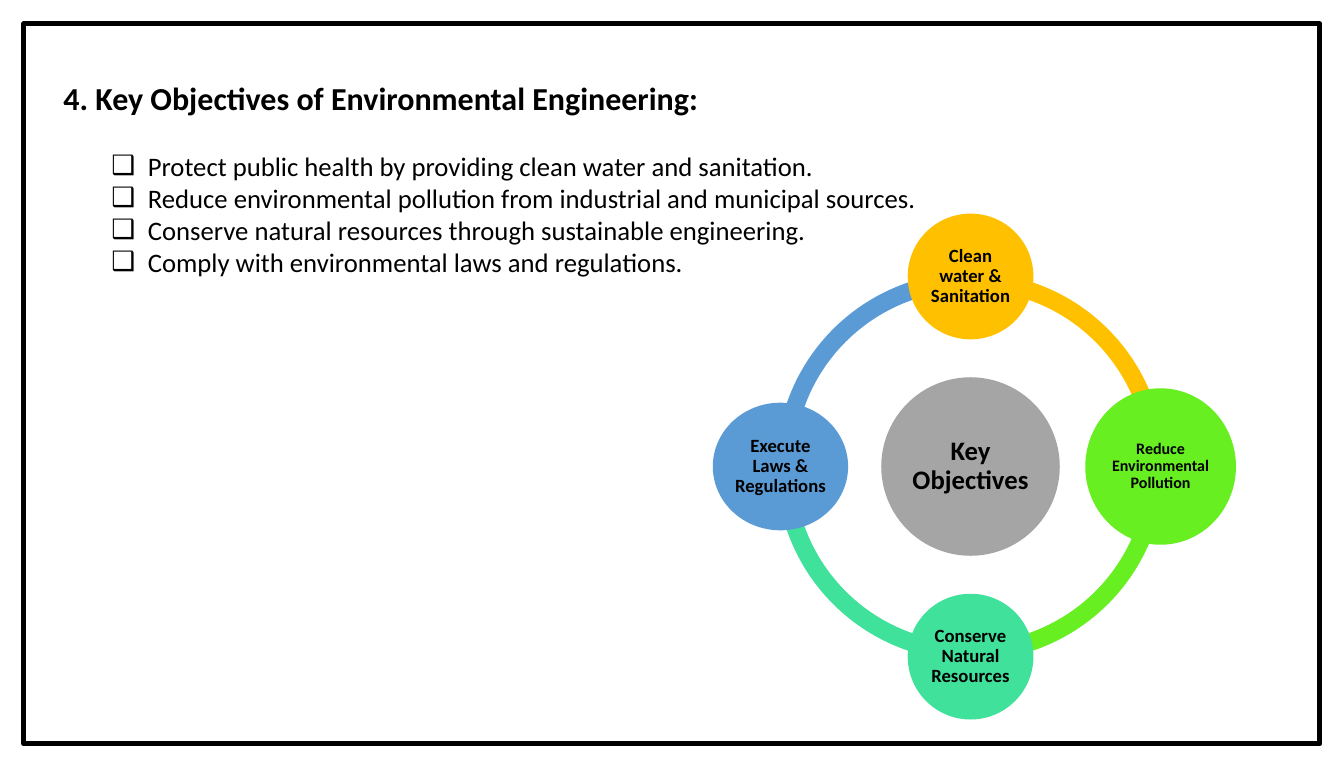
from dataclasses import dataclass

from lxml import etree
from pptx import Presentation
from pptx.dml.color import RGBColor
from pptx.enum import shapes, text
from pptx.oxml import ns
from pptx.util import Inches, Pt

BLACK = RGBColor(0x00, 0x00, 0x00)
GREY = RGBColor(0xA5, 0xA5, 0xA5)
AMBER = RGBColor(0xFF, 0xC0, 0x00)
LIME = RGBColor(0x67, 0xEF, 0x21)
MINT = RGBColor(0x3F, 0xE1, 0x9B)
BLUE = RGBColor(0x5B, 0x9B, 0xD5)

FONT = "Calibri"
CENTER_X, CENTER_Y = 10.11, 4.86
ORBIT = 1.98
RING_SIZE = 4.05
RING_THICKNESS = 0.046
QUARTER_TURN = 54  # 90 degrees in adjustment units
FULL_TURN = 4 * QUARTER_TURN


@dataclass
class Node:
    label: str
    color: RGBColor
    width: float
    height: float
    font_size: int
    step_x: int = 0
    step_y: int = 0


HUB = Node("Key Objectives", GREY, 1.86, 1.86, 20)
# Clockwise from the top
OBJECTIVES = [
    Node("Clean water & Sanitation", AMBER, 1.31, 1.31, 14, step_y=-1),
    Node("Reduce Environmental Pollution", LIME, 1.57, 1.63, 12, step_x=1),
    Node("Conserve Natural Resources", MINT, 1.31, 1.31, 14, step_y=1),
    Node("Execute Laws & Regulations", BLUE, 1.41, 1.33, 14, step_x=-1),
]
TITLE = "4. Key Objectives of Environmental Engineering:"
BULLETS = [
    "Protect public health by providing clean water and sanitation.",
    "Reduce environmental pollution from industrial and municipal sources.",
    "Conserve natural resources through sustainable engineering.",
    "Comply with environmental laws and regulations.",
]


def add_span(para, words: str, size: int, bold: bool) -> None:
    span = para.add_run()
    span.text = words
    span.font.name = FONT
    span.font.size = Pt(size)
    span.font.bold = bold
    span.font.color.rgb = BLACK


def place_text(box, top: float, height: float) -> None:
    box.left, box.top = Inches(0.56), Inches(top)
    box.width, box.height = Inches(12.87), Inches(height)
    frame = box.text_frame
    frame.word_wrap = True
    frame.auto_size = text.MSO_AUTO_SIZE.NONE
    frame.vertical_anchor = text.MSO_ANCHOR.TOP


def add_bullet(para) -> None:
    properties = para._p.get_or_add_pPr()
    properties.set("marL", str(Inches(0.88)))
    properties.set("indent", str(Inches(-0.38)))
    etree.SubElement(properties, ns.qn("a:buChar")).set("char", "❑")


def add_filled(page, kind, color: RGBColor, x: float, y: float,
               width: float, height: float):
    shape = page.shapes.add_shape(
        kind, Inches(x - width / 2), Inches(y - height / 2),
        Inches(width), Inches(height))
    shape.shadow.inherit = False
    shape.fill.solid()
    shape.fill.fore_color.rgb = color
    shape.line.fill.background()
    return shape


def add_arc(page, color: RGBColor, start: int) -> None:
    arc = add_filled(page, shapes.MSO_SHAPE.BLOCK_ARC, color,
                     CENTER_X, CENTER_Y, RING_SIZE, RING_SIZE)
    arc.adjustments[0] = start
    arc.adjustments[1] = (start + QUARTER_TURN) % FULL_TURN
    arc.adjustments[2] = RING_THICKNESS


def add_node(page, node: Node) -> None:
    circle = add_filled(page, shapes.MSO_SHAPE.OVAL, node.color,
                        CENTER_X + node.step_x * ORBIT,
                        CENTER_Y + node.step_y * ORBIT,
                        node.width, node.height)
    frame = circle.text_frame
    frame.word_wrap = True
    frame.vertical_anchor = text.MSO_ANCHOR.MIDDLE
    frame.margin_left = frame.margin_right = Inches(0.01)
    frame.margin_top = frame.margin_bottom = Inches(0.01)
    para = frame.paragraphs[0]
    para.alignment = text.PP_ALIGN.CENTER
    para.line_spacing = 0.9
    add_span(para, node.label, node.font_size, True)


def main() -> None:
    deck = Presentation()
    deck.slide_width, deck.slide_height = Inches(14), Inches(8)
    page = deck.slides.add_slide(deck.slide_layouts[1])

    # Page frame
    border = page.shapes.add_shape(
        shapes.MSO_SHAPE.RECTANGLE, Inches(0.25), Inches(0.25),
        Inches(13.5), Inches(7.5))
    border.shadow.inherit = False
    border.fill.background()
    border.line.color.rgb = BLACK
    border.line.width = Pt(3.75)

    # Title
    title = page.shapes.title
    place_text(title, 0.77, 0.52)
    para = title.text_frame.paragraphs[0]
    para.alignment = text.PP_ALIGN.LEFT
    add_span(para, TITLE, 24, True)

    # Bulleted objectives
    body = page.placeholders[1]
    place_text(body, 1.51, 1.5)
    for index, words in enumerate(BULLETS):
        frame = body.text_frame
        para = frame.add_paragraph() if index else frame.paragraphs[0]
        para.alignment = text.PP_ALIGN.JUSTIFY
        para.space_before = Pt(0)
        add_bullet(para)
        add_span(para, words, 20, False)

    # Ring: each arc leaves its node clockwise, the first from the top
    for index, node in enumerate(OBJECTIVES):
        add_arc(page, node.color, (index + 3) * QUARTER_TURN % FULL_TURN)

    # Hub and surrounding nodes
    for node in [HUB, *OBJECTIVES]:
        add_node(page, node)

    deck.save("out.pptx")


if __name__ == "__main__":
    main()
